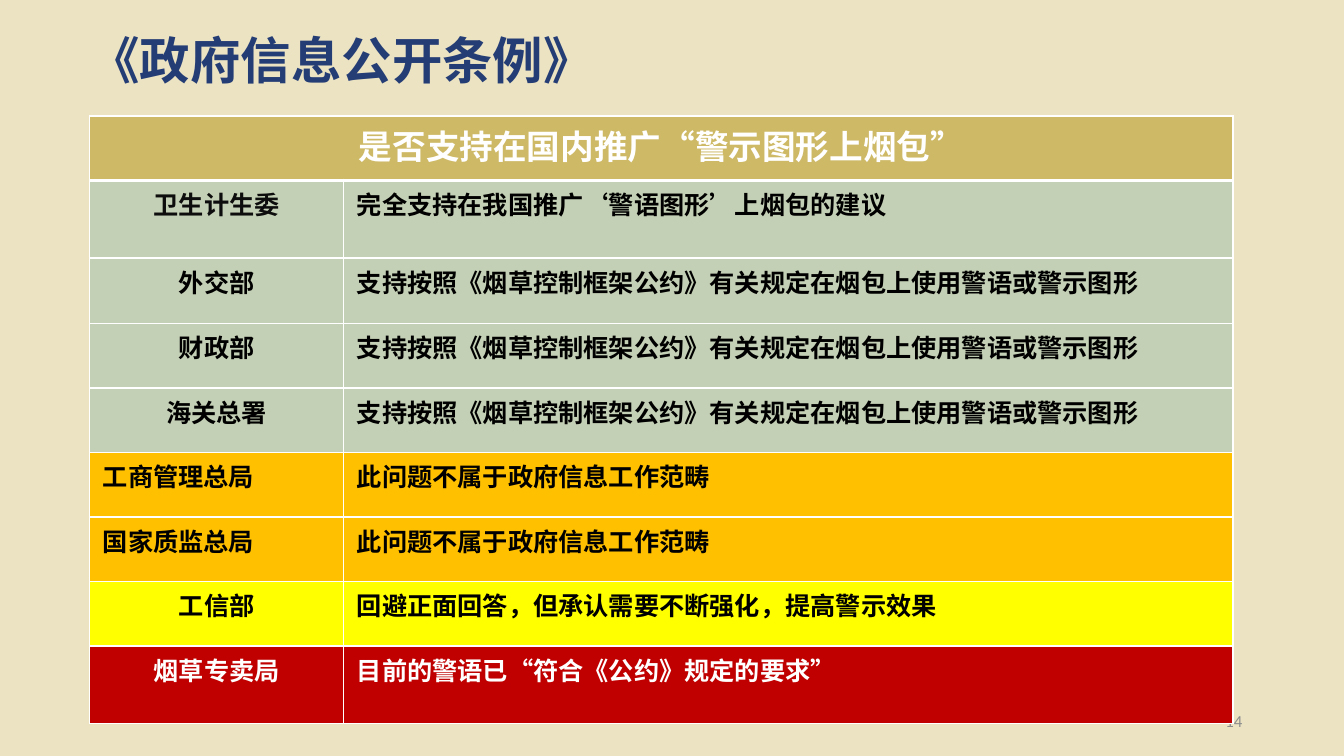
from lxml import etree
from pptx import Presentation
from pptx.dml.color import RGBColor
from pptx.enum import lang, text
from pptx.oxml.ns import qn
from pptx.util import Inches, Pt

# Content
TITLE = "《政府信息公开条例》"
PAGE = "14"
HEAD = "是否支持在国内推广“警示图形上烟包”"
AGREE = "支持按照《烟草控制框架公约》有关规定在烟包上使用警语或警示图形"
OUTSIDE = "此问题不属于政府信息工作范畴"
# agency, reply, stance, agency alignment
REPLIES = [
    ("卫生计生委", "完全支持在我国推广‘警语图形’上烟包的建议", "yes", "mid"),
    ("外交部", AGREE, "yes", "mid"),
    ("财政部", AGREE, "yes", "mid"),
    ("海关总署", AGREE, "yes", "mid"),
    ("工商管理总局", OUTSIDE, "none", "left"),
    ("国家质监总局", OUTSIDE, "none", "left"),
    ("工信部", "回避正面回答，但承认需要不断强化，提高警示效果", "dodge", "mid"),
    ("烟草专卖局", "目前的警语已“符合《公约》规定的要求”", "no", "mid"),
]
COLS = [2.52, 8.82]
ROWS = [0.64, 0.77, 0.65, 0.64, 0.64, 0.64, 0.64, 0.64, 0.77]

THEME = {
    "back": "EBE3C2", "title": "253D75", "page": "8C8C8C", "line": "FFFFFF",
    "head": ("CEB966", "FFFFFF"),
    "yes": ("C4D0B5", "000000"), "none": ("FFC000", "000000"),
    "dodge": ("FFFF00", "000000"), "no": ("C00000", "FFFFFF"),
    "agency": "0D0D0D",
    "han": "Noto Sans CJK SC", "latin": "Calibri",
    "big": 36, "sub": 24, "body": 18, "small": 12,
}
ALIGN = {"left": text.PP_ALIGN.LEFT, "mid": text.PP_ALIGN.CENTER,
         "right": text.PP_ALIGN.RIGHT}


def write(frame, words, size, color, face, align="left", bold=True):
    para = frame.paragraphs[0]
    para.text = words
    para.alignment = ALIGN[align]
    font = para.font
    font.size, font.bold, font.name = Pt(size), bold, face
    font.color.rgb = RGBColor.from_string(color)
    run = para.runs[0].font
    run.language_id = lang.MSO_LANGUAGE_ID.SIMPLIFIED_CHINESE
    # East Asian face
    etree.SubElement(font._element, qn("a:ea"), typeface=THEME["han"])
    return para


def box(slide, place, *args, **more):
    frame = slide.shapes.add_textbox(*map(Inches, place)).text_frame
    frame.word_wrap = True
    frame.vertical_anchor = text.MSO_ANCHOR.MIDDLE
    return write(frame, *args, **more)


def edge(cell, widths):
    props = cell._tc.get_or_add_tcPr()
    for spot, (side, wide) in enumerate(zip("LRTB", widths)):
        line = etree.Element(qn("a:ln" + side), w=str(Pt(wide)))
        fill = etree.SubElement(line, qn("a:solidFill"))
        etree.SubElement(fill, qn("a:srgbClr"), val=THEME["line"])
        props.insert(spot, line)


def paint(cell, words, stance, size, face, align="left", color=None):
    fill, ink = THEME[stance]
    cell.margin_left = cell.margin_right = Inches(0.13)
    cell.margin_top = cell.margin_bottom = Inches(0.05)
    cell.fill.solid()
    cell.fill.fore_color.rgb = RGBColor.from_string(fill)
    write(cell.text_frame, words, size, color or ink, face, align)


def main():
    deck = Presentation()
    deck.slide_width, deck.slide_height = Inches(13.33), Inches(7.5)
    slide = deck.slides.add_slide(deck.slide_layouts[6])
    back = slide.background.fill
    back.solid()
    back.fore_color.rgb = RGBColor.from_string(THEME["back"])

    # Title and page number
    title = box(slide, (0.79, 0, 12, 1.25), TITLE, THEME["big"],
                THEME["title"], THEME["han"])
    title.line_spacing = 0.9
    box(slide, (9.42, 6.95, 3, 0.4), PAGE, THEME["small"], THEME["page"],
        THEME["latin"], "right", bold=False)

    # Table grid
    grid = slide.shapes.add_table(
        len(ROWS), len(COLS), Inches(0.89), Inches(1.15),
        Inches(sum(COLS)), Inches(sum(ROWS))).table
    for col, wide in zip(grid.columns, COLS):
        col.width = Inches(wide)
    for row, high in zip(grid.rows, ROWS):
        row.height = Inches(high)

    # Heading row
    top = grid.cell(0, 0)
    top.merge(grid.cell(0, 1))
    paint(top, HEAD, "head", THEME["sub"], THEME["han"], "mid")

    # Replies
    for num, (agency, reply, stance, align) in enumerate(REPLIES, 1):
        ink = THEME["agency"] if num == 1 else None
        paint(grid.cell(num, 0), agency, stance, THEME["body"],
              THEME["han"], align, ink)
        paint(grid.cell(num, 1), reply, stance, THEME["body"], THEME["latin"])

    # Borders, heavier under the heading
    for num, row in enumerate(grid.rows):
        for cell in row.cells:
            edge(cell, (1, 1, 3 if num == 1 else 1, 3 if num == 0 else 1))

    deck.save("out.pptx")


if __name__ == "__main__":
    main()
